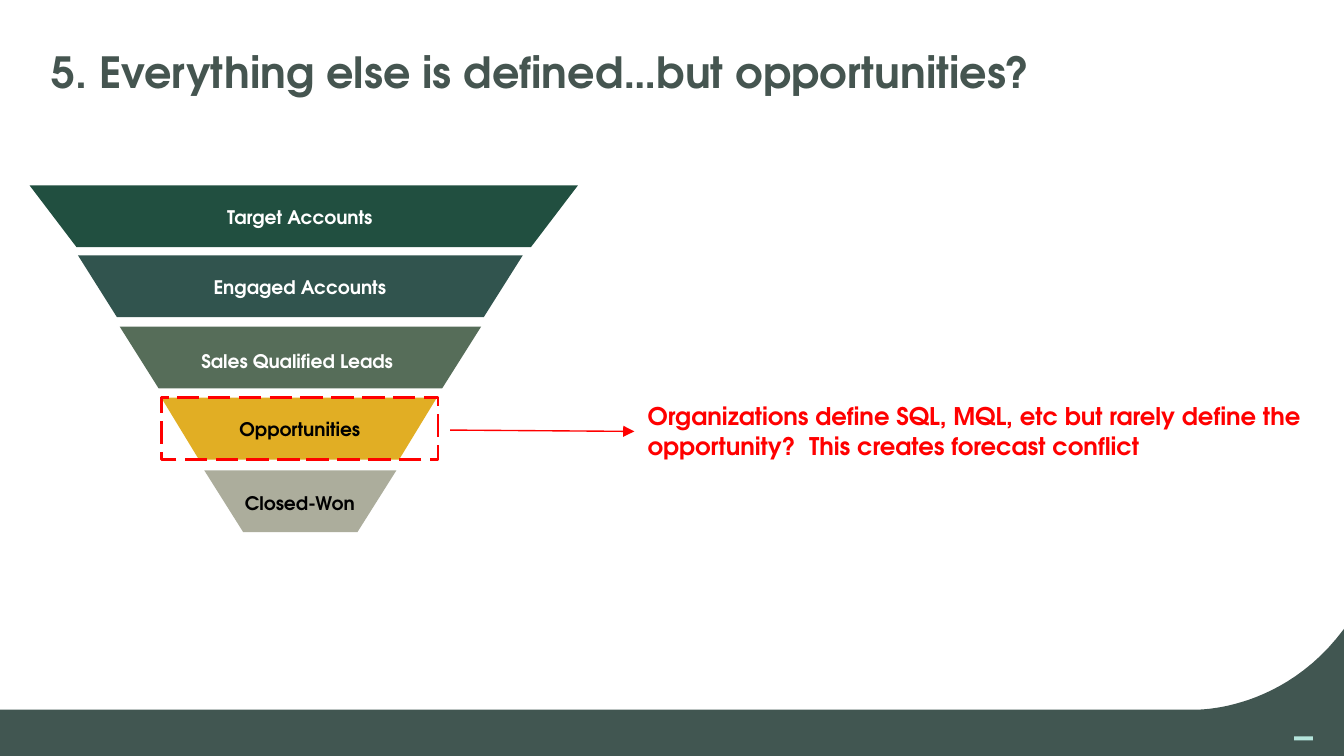
from lxml import etree
from pptx import Presentation
from pptx.dml.color import RGBColor
from pptx.enum.dml import MSO_LINE
from pptx.enum.shapes import MSO_CONNECTOR, MSO_SHAPE
from pptx.enum.text import MSO_ANCHOR, PP_ALIGN
from pptx.oxml.ns import qn
from pptx.util import Inches, Pt

RECTANGLE = MSO_SHAPE.RECTANGLE
STRAIGHT = MSO_CONNECTOR.STRAIGHT
LONG_DASH = MSO_LINE.LONG_DASH
LEFT, CENTER = PP_ALIGN.LEFT, PP_ALIGN.CENTER
TOP = MSO_ANCHOR.TOP
FONT = "TeX Gyre Adventor"
COLORS = {
    "white": "FFFFFF", "black": "000000", "red": "FF0000", "title": "455550",
    "footer": "415651", "mint": "B5E5DC", "target": "214F40", "engaged": "31544E",
    "leads": "566D59", "opportunities": "E1AE24", "won": "ACAD9C",
}

presentation = Presentation()
presentation.slide_width = Inches(10)
presentation.slide_height = Inches(10) * 9 // 16
slide = presentation.slides.add_slide(presentation.slide_layouts[6])
shapes = slide.shapes


def add_polygon(points, color):
    corners = [(Inches(x), Inches(y)) for x, y in points]
    builder = shapes.build_freeform(*corners[0])
    builder.add_line_segments(corners[1:], close=True)
    shape = builder.convert_to_shape()
    shape.shadow.inherit = False
    shape.fill.solid()
    shape.fill.fore_color.rgb = RGBColor.from_string(COLORS[color])
    shape.line.fill.background()


def set_text(shape, text, size, color, alignment=LEFT, margins=(0, 0)):
    frame = shape.text_frame
    frame.word_wrap = True
    frame.vertical_anchor = TOP
    frame.margin_left = frame.margin_right = Inches(margins[0])
    frame.margin_top = frame.margin_bottom = Inches(margins[1])
    paragraph = frame.paragraphs[0]
    paragraph.text = text
    paragraph.alignment = alignment
    paragraph.font.name = FONT
    paragraph.font.size = Pt(size)
    paragraph.font.bold = True
    paragraph.font.color.rgb = RGBColor.from_string(COLORS[color])
    return paragraph


curve_controls = [(8.91, 5.28), (8.91, 5.28), (9.55, 5.29), (10, 4.68)]
footer_points = [(10, 5.63), (0, 5.63), (0, 5.28)]
curve_steps = 24
for step in range(curve_steps + 1):
    t = step / curve_steps
    weights = [(1 - t) ** 3, 3 * t * (1 - t) ** 2, 3 * t ** 2 * (1 - t), t ** 3]
    footer_points.append(tuple(
        sum(weight * control[axis] for weight, control in zip(weights, curve_controls))
        for axis in (0, 1)
    ))
add_polygon(footer_points, "footer")

mark = shapes.add_shape(RECTANGLE, Inches(9.63), Inches(5.48), Inches(0.14), Inches(0.03))
mark.shadow.inherit = False
mark.fill.solid()
mark.fill.fore_color.rgb = RGBColor.from_string(COLORS["mint"])
mark.line.fill.background()

title = shapes.add_textbox(Inches(0.38), Inches(0.38), Inches(9.48), Inches(0.36))
title_paragraph = set_text(title, "5. Everything else is defined…but opportunities?", 23, "title")
title_paragraph.line_spacing = 0.9

stage_height = 0.46
label_width = 1.72
stages = [
    ("Target Accounts", "target", "white", 1.38, 0.22, 4.3, 0.35, 2.23, 1.53),
    ("Engaged Accounts", "engaged", "white", 1.9, 0.58, 3.89, 0.29, 2.23, 2.05),
    ("Sales Qualified Leads", "leads", "white", 2.43, 0.89, 3.58, 0.29, 2.21, 2.6),
    ("Opportunities", "opportunities", "black", 2.96, 1.2, 3.25, 0.28, 2.23, 3.11),
    ("Closed-Won", "won", "black", 3.5, 1.52, 2.95, 0.29, 2.23, 3.66),
]
for name, fill, text_color, top, left, right, inset, label_center, label_top in stages:
    bottom = top + stage_height
    add_polygon(
        [(left, top), (right, top), (right - inset, bottom), (left + inset, bottom)], fill
    )
    label = shapes.add_textbox(
        Inches(label_center - label_width / 2), Inches(label_top),
        Inches(label_width), Inches(0.17),
    )
    set_text(label, name, 10, text_color, CENTER)

highlight = shapes.add_shape(
    RECTANGLE, Inches(1.2), Inches(2.96), Inches(2.06), Inches(stage_height)
)
highlight.shadow.inherit = False
highlight.fill.background()
highlight.line.color.rgb = RGBColor.from_string(COLORS["red"])
highlight.line.width = Pt(1.5)
highlight.line.dash_style = LONG_DASH

callout = shapes.add_shape(RECTANGLE, Inches(4.72), Inches(2.94), Inches(5.14), Inches(0.54))
callout.shadow.inherit = False
callout.fill.solid()
callout.fill.fore_color.rgb = RGBColor.from_string(COLORS["white"])
callout.line.fill.background()
set_text(
    callout,
    "Organizations define SQL, MQL, etc but rarely define the opportunity?  "
    "This creates forecast conflict",
    13, "red", margins=(0.1, 0.05),
)

arrow = shapes.add_connector(STRAIGHT, Inches(3.35), Inches(3.2), Inches(4.72), Inches(3.21))
arrow.end_connect(callout, 1)
arrow.line.color.rgb = RGBColor.from_string(COLORS["red"])
arrow.line.width = Pt(0.75)
etree.SubElement(arrow.line._get_or_add_ln(), qn("a:tailEnd"), type="triangle")
etree.SubElement(arrow._element.spPr, qn("a:effectLst"))

presentation.save("out.pptx")
